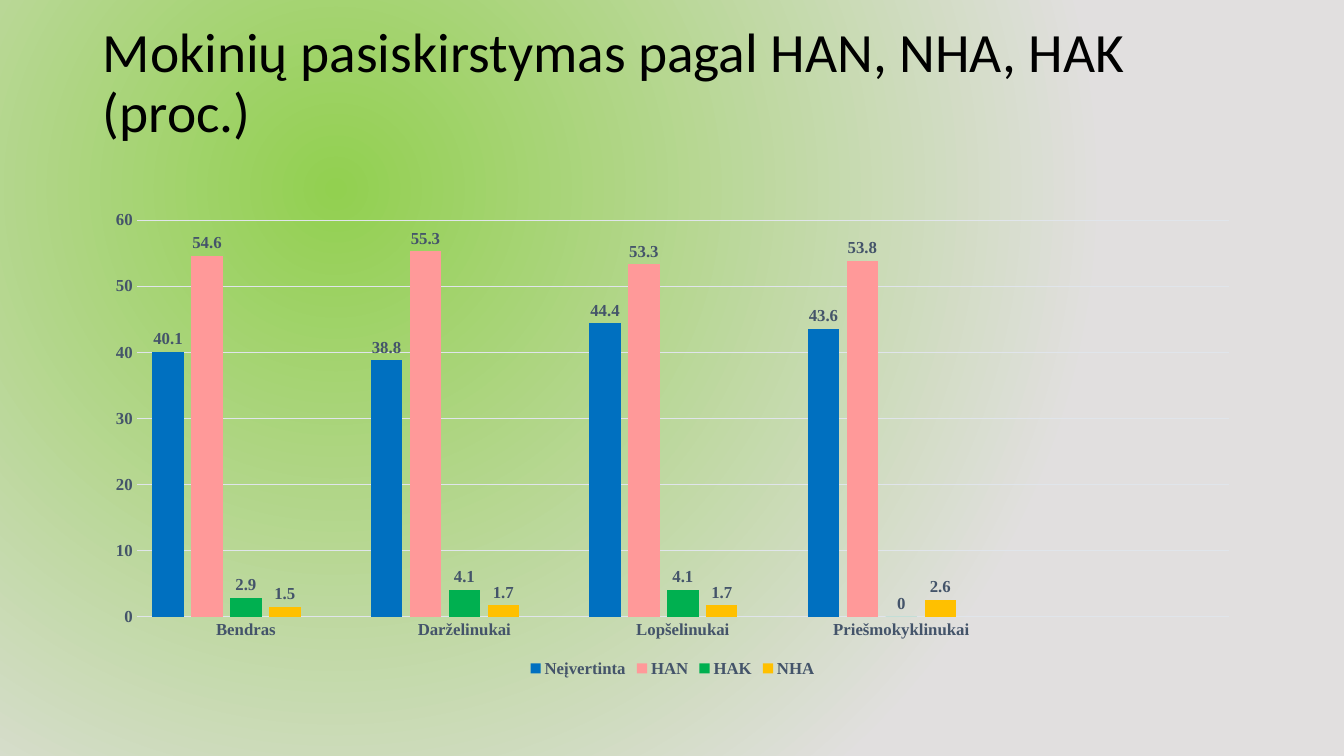
from lxml.etree import SubElement
from pptx import Presentation
from pptx.chart.data import CategoryChartData
from pptx.dml.color import RGBColor
from pptx.enum.chart import XL_CHART_TYPE as ChartType, XL_LABEL_POSITION as LabelPosition
from pptx.enum.chart import XL_LEGEND_POSITION as LegendPosition, XL_TICK_MARK as TickMark
from pptx.enum.text import MSO_ANCHOR as Anchor, MSO_AUTO_SIZE as AutoSize
from pptx.oxml import parse_xml
from pptx.oxml.ns import nsdecls, qn
from pptx.util import Inches, Pt

WIDTH, HEIGHT = 13.33, 7.5
MARGIN, CONTENT_WIDTH = 0.92, 11.5
INK, GRID = "44546A", "E0E5EB"

# The last category and the last series are empty and only reserve space
CATEGORIES = ["Bendras", "Darželinukai", "Lopšelinukai", "Priešmokyklinukai", ""]
SERIES = [
    ("Neįvertinta", "0070C0", [40.1, 38.8, 44.4, 43.6, None]),
    ("HAN", "FF9999", [54.6, 55.3, 53.3, 53.8, None]),
    ("HAK", "00B050", [2.9, 4.1, 4.1, 0, None]),
    ("NHA", "FFC000", [1.5, 1.7, 1.7, 2.6, None]),
    ("Series 5", "559BDB", [None] * 5),
]


def color(hex_value):
    return RGBColor.from_string(hex_value)


def style_font(font, size, hex_value, name, bold=False):
    font.size, font.name, font.bold = Pt(size), name, bold
    font.color.rgb = color(hex_value)


def style_chart_font(font):
    style_font(font, 12, INK, "Times New Roman", True)


def style_line(line, hex_value):
    line.color.rgb = color(hex_value)
    line.width = Pt(0.75)


def paint_background(slide):
    fill = slide.background.fill
    fill.gradient()
    for stop, hex_value in zip(fill.gradient_stops, ("92D050", "E1DFDF")):
        stop.color.rgb = color(hex_value)
    # Circular gradient centred a quarter of the way in
    gradient = slide.element.find(".//" + qn("a:gradFill"))
    gradient.remove(gradient.find(qn("a:lin")))
    circle = SubElement(gradient, qn("a:path"), path="circle")
    SubElement(circle, qn("a:fillToRect"), l="50000", t="50000", r="100000", b="100000")


def add_title(slide, left, top, width, height):
    box = slide.shapes.add_textbox(*map(Inches, (left, top, width, height)))
    frame = box.text_frame
    frame.text = "Mokinių pasiskirstymas pagal HAN, NHA, HAK (proc.)"
    frame.word_wrap, frame.auto_size = True, AutoSize.NONE
    frame.vertical_anchor = Anchor.MIDDLE
    frame.margin_bottom = Inches(0.63)
    paragraph = frame.paragraphs[0]
    paragraph.line_spacing = 0.9
    style_font(paragraph.runs[0].font, 39.6, "000000", "Calibri")


def style_axes(chart):
    for axis in (chart.category_axis, chart.value_axis):
        axis.major_tick_mark = axis.minor_tick_mark = TickMark.NONE
        style_chart_font(axis.tick_labels.font)
    style_line(chart.category_axis.format.line, GRID)
    values = chart.value_axis
    values.minimum_scale, values.maximum_scale, values.major_unit = 0, 60, 10
    values.format.line.fill.background()
    style_line(values.major_gridlines.format.line, GRID)


def style_legend(chart):
    chart.has_legend = True
    legend = chart.legend
    legend.position = LegendPosition.BOTTOM
    legend.include_in_layout = False
    style_chart_font(legend.font)
    # Leave the empty series out of the legend
    entry = parse_xml(
        f'<c:legendEntry {nsdecls("c")}><c:idx val="{len(SERIES) - 1}"/>'
        '<c:delete val="1"/></c:legendEntry>')
    chart.element.find(".//" + qn("c:legendPos")).addnext(entry)


def add_column_chart(slide, left, top, width, height):
    data = CategoryChartData()
    data.categories = CATEGORIES
    for name, _, values in SERIES:
        data.add_series(name, values)
    chart = slide.shapes.add_chart(
        ChartType.COLUMN_CLUSTERED, *map(Inches, (left, top, width, height)), data).chart
    chart.has_title = False
    style_font(chart.font, 10, "000000", "Calibri")
    plot = chart.plots[0]
    plot.gap_width, plot.overlap, plot.vary_by_categories = 100, -24, False
    for series, (_, hex_value, _) in zip(plot.series, SERIES):
        series.format.fill.solid()
        series.format.fill.fore_color.rgb = color(hex_value)
        labels = series.data_labels
        labels.show_value, labels.position = True, LabelPosition.OUTSIDE_END
        style_chart_font(labels.font)
    style_axes(chart)
    style_legend(chart)


def main():
    presentation = Presentation()
    presentation.slide_width, presentation.slide_height = Inches(WIDTH), Inches(HEIGHT)
    slide = presentation.slides.add_slide(presentation.slide_layouts[6])
    paint_background(slide)
    add_title(slide, MARGIN, 0.4, CONTENT_WIDTH, 1.45)
    add_column_chart(slide, MARGIN, 2, CONTENT_WIDTH, 4.76)
    presentation.save("out.pptx")


if __name__ == "__main__":
    main()
